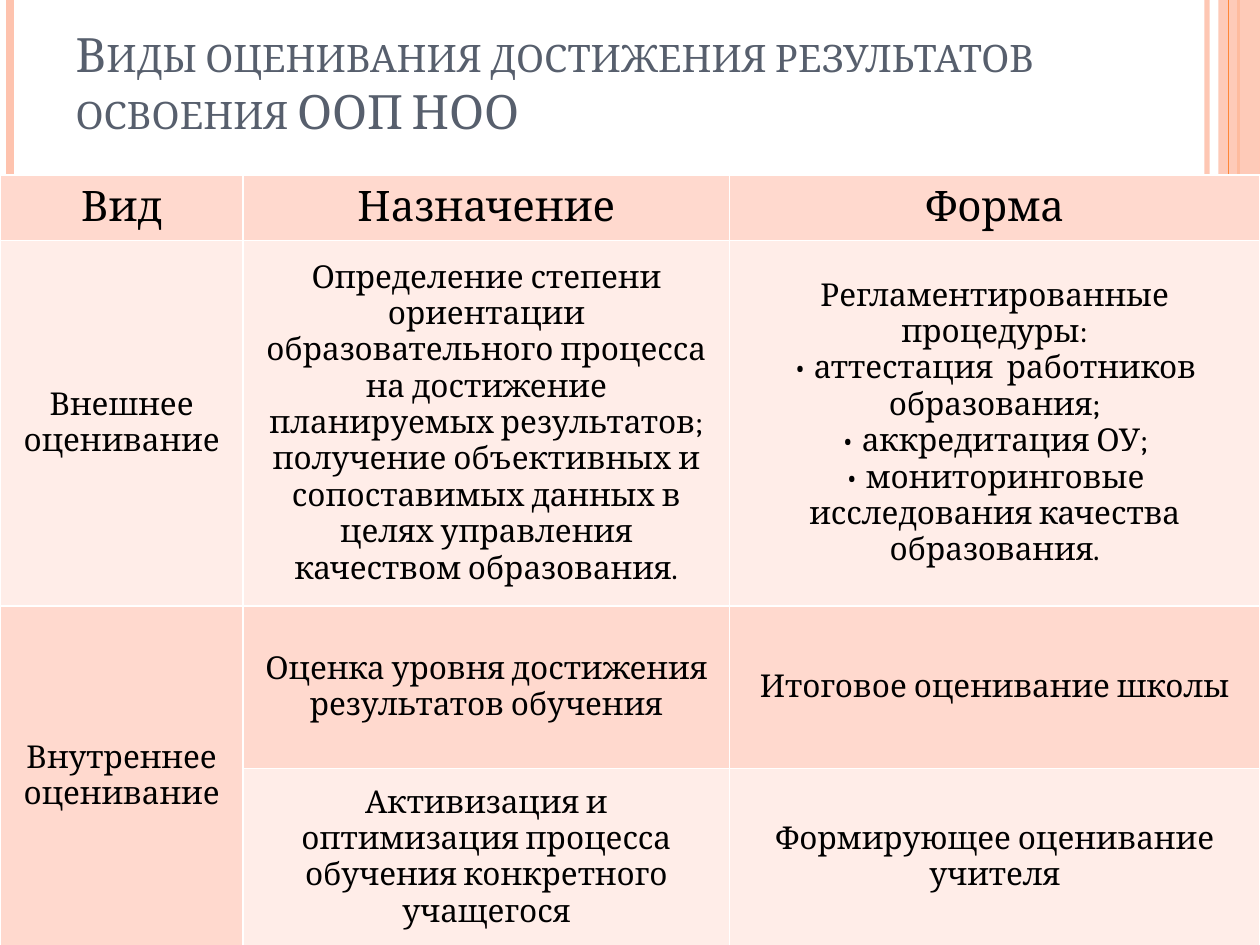
from dataclasses import dataclass

from lxml import etree
from pptx import Presentation
from pptx.dml.color import RGBColor
from pptx.enum.shapes import MSO_CONNECTOR, MSO_SHAPE
from pptx.enum.text import MSO_ANCHOR, MSO_AUTO_SIZE, PP_ALIGN
from pptx.oxml.ns import qn
from pptx.util import Inches, Pt

STRAIGHT = MSO_CONNECTOR.STRAIGHT
RECTANGLE = MSO_SHAPE.RECTANGLE
MIDDLE, BOTTOM = MSO_ANCHOR.MIDDLE, MSO_ANCHOR.BOTTOM
LEFT, CENTER = PP_ALIGN.LEFT, PP_ALIGN.CENTER
FIXED_SIZE = MSO_AUTO_SIZE.NONE

WIDTH, HEIGHT = Inches(10), Inches(7.5)
FONT = "Cambria"
COLORS = {
    "peach": "FEC3AE",
    "orange": "FE8637",
    "heading": "575F6D",
    "text": "000000",
    "border": "FFFFFF",
    "band_dark": "FFD9CE",
    "band_light": "FFEDE8",
}


@dataclass(frozen=True)
class Rail:
    x_share: float
    color: str
    points: float
    opacity: int = 100


@dataclass(frozen=True)
class Entry:
    row: int
    column: int
    text: str


LEFT_RAIL = Rail(0.008, "peach", 4.5)
RIGHT_RAILS = [
    Rail(0.958, "peach", 3, 93),
    Rail(0.983, "orange", 1.5),
]
STRIP_RAIL = Rail(0.975, "orange", 0.75)
STRIP_SHARE = 0.967

TITLE = "Виды оценивания достижения результатов освоения ООП НОО"
TABLE_TOP = 1.39
COLUMN_WIDTHS = [1.93, 3.86, 4.21]
ROW_HEIGHTS = [0.52, 2.9, 1.29, 1.41]
ENTRIES = [
    Entry(0, 0, "Вид"),
    Entry(0, 1, "Назначение"),
    Entry(0, 2, "Форма"),
    Entry(1, 0, "Внешнее оценивание"),
    Entry(1, 1, "Определение степени ориентации образовательного процесса "
                "на достижение планируемых результатов; получение объективных "
                "и сопоставимых данных в целях управления качеством образования."),
    Entry(1, 2, "Регламентированные процедуры:\n"
                "• аттестация  работников образования;\n"
                "• аккредитация ОУ;\n"
                "• мониторинговые исследования качества образования."),
    Entry(2, 0, "Внутреннее оценивание"),
    Entry(2, 1, "Оценка уровня достижения результатов обучения"),
    Entry(2, 2, "Итоговое оценивание школы"),
    Entry(3, 1, "Активизация и оптимизация процесса обучения конкретного учащегося"),
    Entry(3, 2, "Формирующее оценивание учителя"),
]


def rgb(name: str) -> RGBColor:
    return RGBColor.from_string(COLORS[name])


def set_opacity(holder, percent: int) -> None:
    color = next(holder.iter(qn("a:srgbClr")))
    etree.SubElement(color, qn("a:alpha"), val=str(percent * 1000))


def draw_rail(slide, rail: Rail) -> None:
    x = round(WIDTH * rail.x_share)
    connector = slide.shapes.add_connector(STRAIGHT, x, 0, x, HEIGHT)
    connector.line.color.rgb = rgb(rail.color)
    connector.line.width = Pt(rail.points)
    properties = connector._element.spPr
    if rail.opacity < 100:
        set_opacity(properties, rail.opacity)
    etree.SubElement(properties, qn("a:effectLst"))


def draw_strip(slide) -> None:
    left = round(WIDTH * STRIP_SHARE)
    strip = slide.shapes.add_shape(RECTANGLE, left, 0, WIDTH - left, HEIGHT)
    strip.shadow.inherit = False
    strip.fill.solid()
    strip.fill.fore_color.rgb = rgb("peach")
    set_opacity(strip._element.spPr, 87)
    strip.line.fill.background()


def style_paragraph(paragraph, points: float, color: str, alignment) -> None:
    paragraph.alignment = alignment
    paragraph.font.name = FONT
    paragraph.font.size = Pt(points)
    paragraph.font.color.rgb = rgb(color)


def write_title(slide) -> None:
    title = slide.shapes.title
    title.left, title.top = Inches(0.5), Inches(0.3)
    title.width, title.height = Inches(8.17), Inches(0.85)
    frame = title.text_frame
    frame.text = TITLE
    frame.word_wrap = True
    frame.auto_size = FIXED_SIZE
    frame.vertical_anchor = BOTTOM
    heading = frame.paragraphs[0]
    style_paragraph(heading, 27, "heading", LEFT)
    heading.runs[0].font._element.set("cap", "small")


def add_borders(cell) -> None:
    properties = cell._tc.get_or_add_tcPr()
    for position, side in enumerate(("lnL", "lnR", "lnT", "lnB")):
        border = etree.Element(qn(f"a:{side}"), w=str(Pt(1)))
        fill = etree.SubElement(border, qn("a:solidFill"))
        etree.SubElement(fill, qn("a:srgbClr"), val=COLORS["border"])
        properties.insert(position, border)


def draw_table(slide) -> None:
    table = slide.shapes.add_table(
        len(ROW_HEIGHTS), len(COLUMN_WIDTHS), 0, Inches(TABLE_TOP),
        WIDTH, Inches(sum(ROW_HEIGHTS))).table
    for column, width in zip(table.columns, COLUMN_WIDTHS):
        column.width = Inches(width)
    for row_index, (row, height) in enumerate(zip(table.rows, ROW_HEIGHTS)):
        row.height = Inches(height)
        for cell in row.cells:
            cell.fill.solid()
            cell.fill.fore_color.rgb = rgb("band_light" if row_index % 2 else "band_dark")
            add_borders(cell)
    table.cell(2, 0).merge(table.cell(3, 0))
    for entry in ENTRIES:
        cell = table.cell(entry.row, entry.column)
        cell.text = entry.text
        cell.vertical_anchor = MIDDLE
        for paragraph in cell.text_frame.paragraphs:
            style_paragraph(paragraph, 18 if entry.row else 24, "text", CENTER)


def main() -> None:
    presentation = Presentation()
    presentation.slide_width, presentation.slide_height = WIDTH, HEIGHT
    slide = presentation.slides.add_slide(presentation.slide_layouts[5])
    for rail in [LEFT_RAIL, *RIGHT_RAILS]:
        draw_rail(slide, rail)
    draw_strip(slide)
    draw_rail(slide, STRIP_RAIL)
    write_title(slide)
    draw_table(slide)
    presentation.save("out.pptx")


if __name__ == "__main__":
    main()
